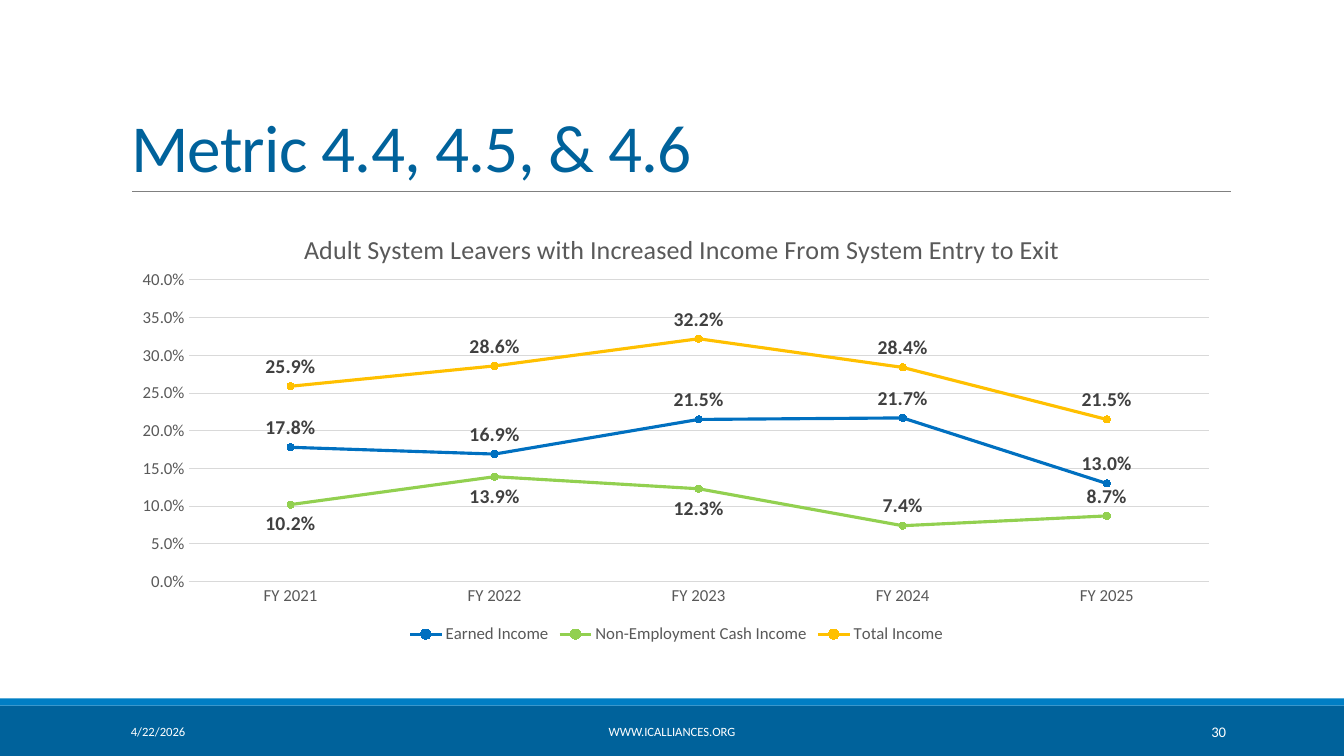
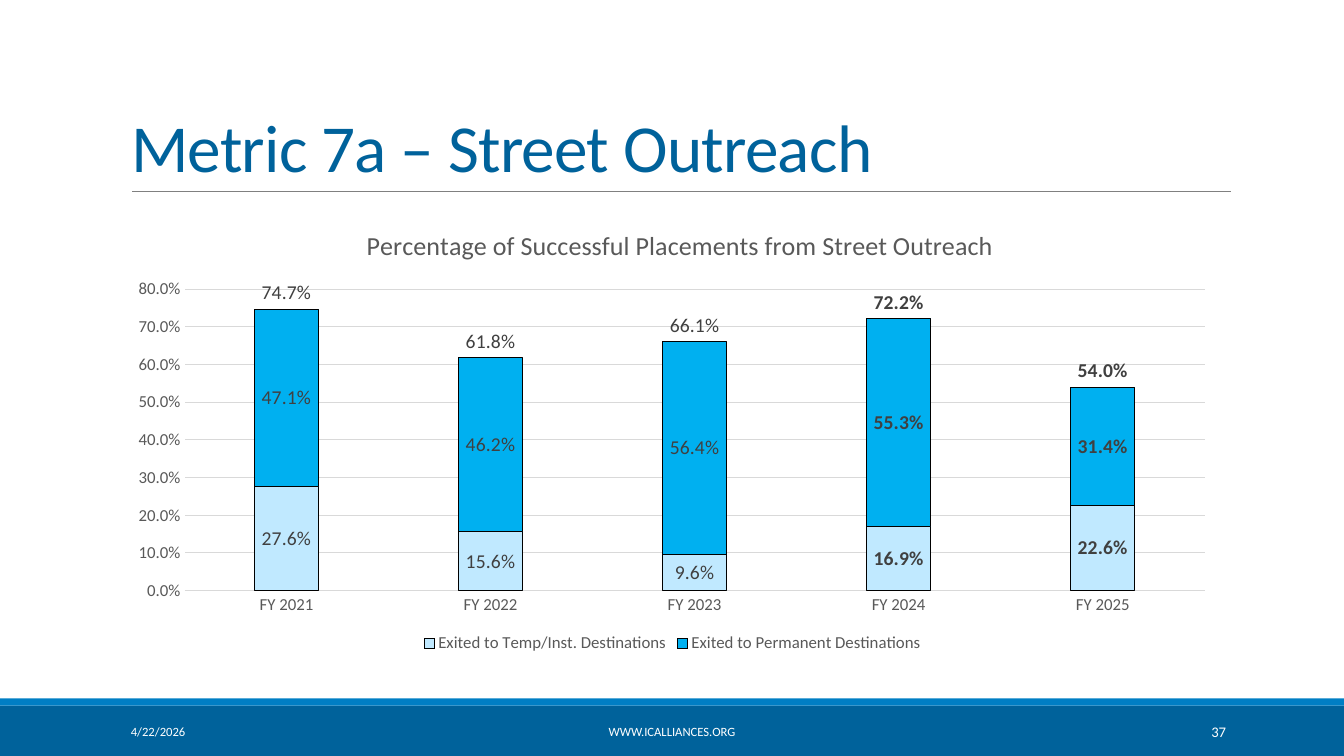
"""Build two metric slides, each with a ruled title, a chart and a footer band."""
from copy import deepcopy

from pptx import Presentation
from pptx.chart.data import CategoryChartData
from pptx.dml.color import RGBColor
from pptx.enum.chart import XL_CHART_TYPE, XL_LABEL_POSITION, XL_LEGEND_POSITION, XL_MARKER_STYLE, XL_TICK_MARK
from pptx.enum.shapes import MSO_CONNECTOR, MSO_SHAPE
from pptx.enum.text import MSO_ANCHOR, MSO_AUTO_SIZE, PP_ALIGN
from pptx.oxml import parse_xml
from pptx.oxml.ns import nsdecls, qn
from pptx.util import Inches, Pt

NAVY, BLUE, WHITE, RULE = "00629B", "007EC4", "FFFFFF", "808080"
CHART_TEXT, LABEL_TEXT, GRID, OUTLINE = "595959", "404040", "D9D9D9", "000000"
ABOVE, BELOW, CENTER = XL_LABEL_POSITION.ABOVE, XL_LABEL_POSITION.BELOW, XL_LABEL_POSITION.CENTER

YEARS = [f"FY {year}" for year in range(2021, 2026)]
BANDS = [(7, 0.5, NAVY), (6.93, 0.07, BLUE)]
PLOT_FRACTIONS = {"x": 0.06, "y": 0.17, "w": 0.92, "h": 0.68}

METRICS = [
    {
        "title": "Metric 4.4, 4.5, & 4.6",
        "number": "30",
        "chart_title": "Adult System Leavers with Increased Income From System Entry to Exit",
        "title_fractions": {"x": 0.16, "y": 0.05},
        "kind": XL_CHART_TYPE.LINE_MARKERS,
        "corner": (1.21, 2.03),
        "top_value": 0.4,
        "step": 0.05,
        "early_bold": True,
        "series": [
            ("Earned Income", (0.178, 0.169, 0.215, 0.217, 0.13), "0070C0", ABOVE, ABOVE),
            ("Non-Employment Cash Income", (0.102, 0.139, 0.123, 0.074, 0.087), "92D050", ABOVE, BELOW),
            ("Total Income", (0.259, 0.286, 0.322, 0.284, 0.215), "FFC000", ABOVE, ABOVE),
        ],
    },
    {
        "title": "Metric 7a – Street Outreach",
        "number": "37",
        "chart_title": "Percentage of Successful Placements from Street Outreach",
        "title_fractions": {"x": 0.22, "y": 0.02},
        "kind": XL_CHART_TYPE.COLUMN_STACKED,
        "corner": (1.17, 2.12),
        "top_value": 0.8,
        "step": 0.1,
        "early_bold": False,
        "series": [
            ("Exited to Temp/Inst. Destinations", (0.276, 0.156, 0.096, 0.169, 0.226), "C0E9FF", CENTER, CENTER),
            ("Exited to Permanent Destinations", (0.471, 0.462, 0.564, 0.553, 0.314), "00B0F0", CENTER, CENTER),
            ("Series 3", (0.747, 0.618, 0.661, 0.722, 0.54), None, ABOVE, ABOVE),
        ],
    },
]


def style_font(font, size, color, bold=False):
    font.name = "Calibri"
    font.size = Pt(size)
    font.bold = bold
    font.color.rgb = RGBColor.from_string(color)


def write(frame, text, size, color, align=PP_ALIGN.LEFT, anchor=None, spacing=None, tracking=None):
    if anchor is not None:
        frame.word_wrap = True
        frame.auto_size = MSO_AUTO_SIZE.NONE
        frame.vertical_anchor = anchor
    paragraph = frame.paragraphs[0]
    paragraph.alignment = align
    if spacing:
        paragraph.line_spacing = spacing
    run = paragraph.add_run()
    run.text = text
    style_font(run.font, size, color)
    if tracking:
        run.font._element.set("spc", str(tracking))


prs = Presentation()
prs.slide_width, prs.slide_height = Inches(13.33), Inches(7.5)

for metric in METRICS:
    slide = prs.slides.add_slide(prs.slide_layouts[5])

    for top, height, color in BANDS:
        band = slide.shapes.add_shape(MSO_SHAPE.RECTANGLE, 0, Inches(top), prs.slide_width, Inches(height))
        band.shadow.inherit = False
        band.fill.solid()
        band.fill.fore_color.rgb = RGBColor.from_string(color)
        band.line.fill.background()

    rule = slide.shapes.add_connector(
        MSO_CONNECTOR.STRAIGHT, Inches(1.31), Inches(1.9), Inches(12.21), Inches(1.9))
    rule.line.color.rgb = RGBColor.from_string(RULE)
    rule.line.width = Pt(0.5)
    rule._element.spPr.append(parse_xml(f"<a:effectLst {nsdecls('a')}/>"))

    heading = slide.shapes.title
    heading.left, heading.top = Inches(1.2), Inches(0.31)
    heading.width, heading.height = Inches(11), Inches(1.59)
    write(heading.text_frame, metric["title"], size=48, color=NAVY,
          anchor=MSO_ANCHOR.BOTTOM, spacing=0.85, tracking=-50)

    for text, left, width, size, align in [
        ("4/22/2026", 1.2, 2.7, 9, PP_ALIGN.LEFT),
        ("WWW.ICALLIANCES.ORG", 4.03, 5.27, 9, PP_ALIGN.CENTER),
        (metric["number"], 10.83, 1.43, 10.5, PP_ALIGN.RIGHT),
    ]:
        footer = slide.shapes.add_textbox(Inches(left), Inches(7.06), Inches(width), Inches(0.4))
        write(footer.text_frame, text, size=size, color=WHITE, align=align, anchor=MSO_ANCHOR.MIDDLE)

    data = CategoryChartData(number_format="0.0%")
    data.categories = YEARS
    for name, values, *_ in metric["series"]:
        data.add_series(name, values)
    left, top = metric["corner"]
    chart = slide.shapes.add_chart(
        metric["kind"], Inches(left), Inches(top), Inches(11), Inches(4.4), data).chart
    style_font(chart.font, 10, OUTLINE)
    chart.plots[0].vary_by_categories = False

    chart.has_title = True
    write(chart.chart_title.text_frame, metric["chart_title"], size=18.6,
          color=CHART_TEXT, align=PP_ALIGN.CENTER)
    chart.has_legend = True
    chart.legend.position = XL_LEGEND_POSITION.BOTTOM
    chart.legend.include_in_layout = False
    style_font(chart.legend.font, 12, CHART_TEXT)

    for axis in (chart.category_axis, chart.value_axis):
        axis.major_tick_mark = axis.minor_tick_mark = XL_TICK_MARK.NONE
        style_font(axis.tick_labels.font, 12, CHART_TEXT)
    percent_axis = chart.value_axis
    percent_axis.minimum_scale, percent_axis.maximum_scale = 0, metric["top_value"]
    percent_axis.major_unit = metric["step"]
    percent_axis.tick_labels.number_format = "0.0%"
    percent_axis.tick_labels.number_format_is_linked = False
    percent_axis.format.line.fill.background()
    for line in (chart.category_axis.format.line, percent_axis.major_gridlines.format.line):
        line.color.rgb = RGBColor.from_string(GRID)
        line.width = Pt(0.75)

    plot_area = chart._chartSpace.chart.plotArea
    for parent, position, fractions in [
        (chart.chart_title._element, 1, metric["title_fractions"]),
        (plot_area, 0, PLOT_FRACTIONS),
    ]:
        for old_layout in parent.findall(qn("c:layout")):
            parent.remove(old_layout)
        target = '<c:layoutTarget val="inner"/>' if "w" in fractions else ""
        modes = '<c:xMode val="edge"/><c:yMode val="edge"/>'
        sizes = "".join(f'<c:{key} val="{value}"/>' for key, value in fractions.items())
        parent.insert(position, parse_xml(
            f"<c:layout {nsdecls('c')}><c:manualLayout>{target}{modes}{sizes}</c:manualLayout></c:layout>"))

    stacked = metric["kind"] == XL_CHART_TYPE.COLUMN_STACKED
    if stacked:
        chart.plots[0].gap_width = 219
        chart.plots[0].overlap = 100
        columns = plot_area.find(qn("c:barChart"))
        totals = columns.findall(qn("c:ser"))[-1]
        for flag in totals.findall(qn("c:invertIfNegative")):
            totals.remove(flag)
        totals_plot = parse_xml(
            f'<c:lineChart {nsdecls("c")}><c:grouping val="standard"/><c:varyColors val="0"/>'
            '<c:marker val="1"/></c:lineChart>')
        totals_plot.insert(2, totals)
        for axis_id in columns.findall(qn("c:axId")):
            totals_plot.append(deepcopy(axis_id))
        columns.addnext(totals_plot)
        chart.legend._element.insert(1, parse_xml(
            f'<c:legendEntry {nsdecls("c")}><c:idx val="2"/><c:delete val="1"/></c:legendEntry>'))

    all_series = [series for plot in chart.plots for series in plot.series]
    for series, (_, _, color, label_position, early_position) in zip(all_series, metric["series"]):
        if color is None:
            series.smooth = False
            series.format.line.fill.background()
            series.marker.style = XL_MARKER_STYLE.NONE
        elif stacked:
            series.format.fill.solid()
            series.format.fill.fore_color.rgb = RGBColor.from_string(color)
            series.format.line.color.rgb = RGBColor.from_string(OUTLINE)
            series.format.line.width = Pt(0.75)
        else:
            series.smooth = False
            series.format.line.color.rgb = RGBColor.from_string(color)
            series.format.line.width = Pt(2.25)
            series.marker.style = XL_MARKER_STYLE.CIRCLE
            series.marker.size = 5
            series.marker.format.fill.solid()
            series.marker.format.fill.fore_color.rgb = RGBColor.from_string(color)
            series.marker.format.line.color.rgb = RGBColor.from_string(color)

        labels = series.data_labels
        labels.show_value = True
        labels.number_format = "0.0%"
        labels.number_format_is_linked = False
        labels.position = label_position
        style_font(labels.font, 14, LABEL_TEXT, bold=True)
        for year_index in range(3):
            early_label = series.points[year_index].data_label
            style_font(early_label.font, 14, LABEL_TEXT, bold=metric["early_bold"])
            early_label.position = early_position

prs.save("out.pptx")
